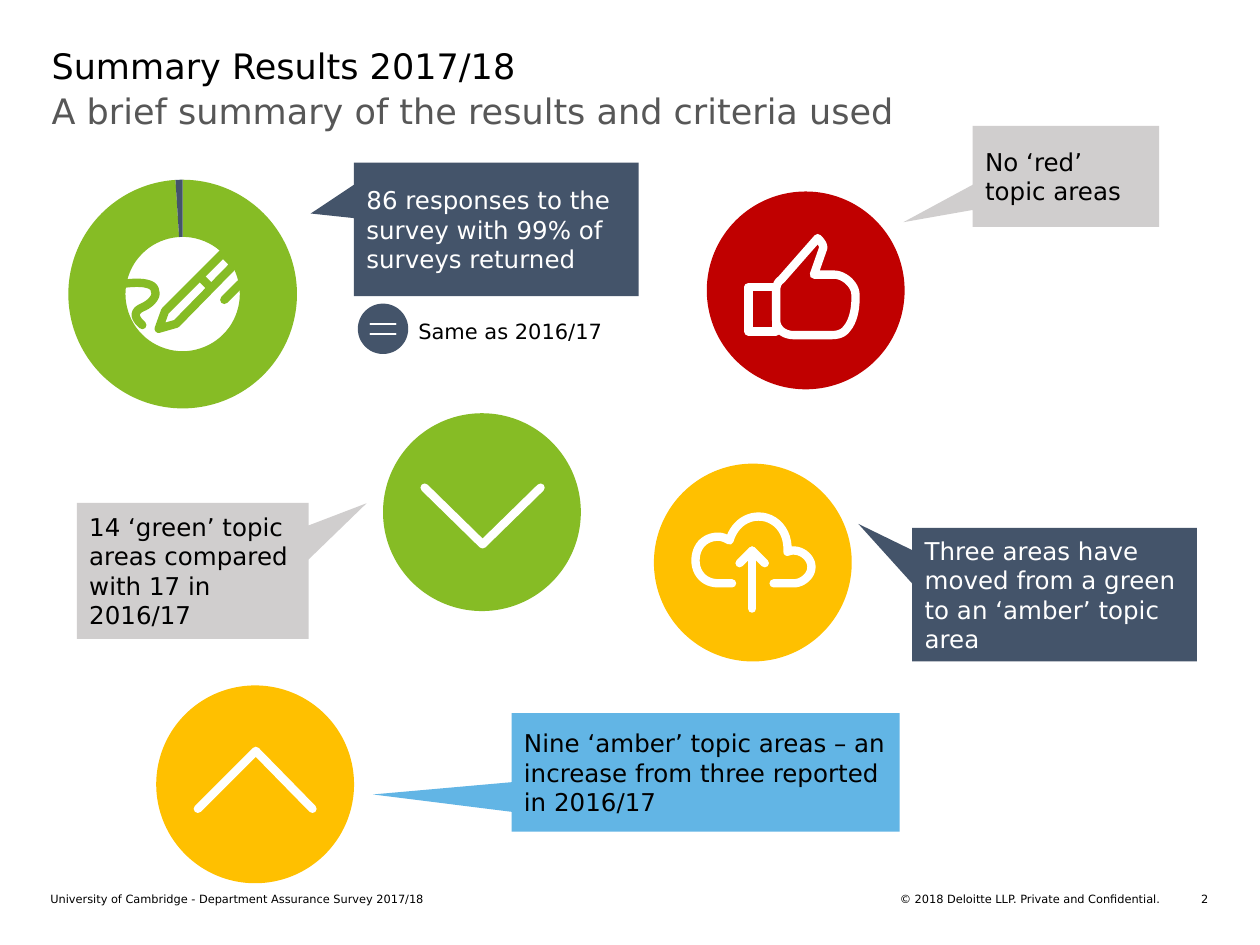
from dataclasses import dataclass

from lxml import etree
from pptx import Presentation
from pptx.chart.data import CategoryChartData
from pptx.dml.color import RGBColor
from pptx.enum.chart import XL_CHART_TYPE as Chart
from pptx.enum.shapes import MSO_CONNECTOR as Connector, MSO_SHAPE as Shape
from pptx.enum.text import MSO_ANCHOR as Anchor, PP_ALIGN as Align
from pptx.oxml import parse_xml
from pptx.oxml.ns import nsdecls, qn
from pptx.util import Inches, Pt


@dataclass(frozen=True)
class Theme:
    font: str = "DejaVu Sans"
    black: str = "000000"
    white: str = "FFFFFF"
    gray: str = "575757"
    pale: str = "D0CECE"
    navy: str = "44546A"
    blue: str = "62B5E5"
    green: str = "86BC25"
    red: str = "C00000"
    amber: str = "FFC000"
    heading: float = 20
    callout: float = 14
    note: float = 12
    chart: float = 10
    footer: float = 6.5
    thick: float = 4.75
    thin: float = 1.25


THEME = Theme()

# Text, left, top, width, height, size, colour, alignment
TEXTS = [
    ("Summary Results 2017/18", 0.41, 0.35, 9.16, 0.36, THEME.heading, THEME.black, Align.LEFT),
    ("A brief summary of the results and criteria used", 0.41, 0.71, 9.16, 0.36,
     THEME.heading, THEME.gray, Align.LEFT),
    ("Same as 2016/17", 3.32, 2.53, 2.19, 0.2, THEME.note, THEME.black, Align.LEFT),
    ("University of Cambridge - Department Assurance Survey 2017/18", 0.4, 7.08, 4.11, 0.27,
     THEME.footer, THEME.black, Align.LEFT),
    ("© 2018 Deloitte LLP. Private and Confidential.", 5.1, 7.08, 4.11, 0.27,
     THEME.footer, THEME.black, Align.RIGHT),
    ("2", 9.34, 7.08, 0.25, 0.11, THEME.footer, THEME.black, Align.RIGHT),
]

# Text, left, top, width, height, pointer, fill, text colour
CALLOUTS = [
    ("86 responses to the survey with 99% of surveys returned",
     2.81, 1.29, 2.26, 1.06, (-0.652, -0.118), THEME.navy, THEME.white),
    ("14 ‘green’ topic areas compared with 17 in 2016/17",
     0.61, 3.99, 1.84, 1.08, (0.75, -0.496), THEME.pale, THEME.black),
    ("Nine ‘amber’ topic areas – an increase from three reported in 2016/17",
     4.06, 5.66, 3.08, 0.94, (-0.857, 0.187), THEME.blue, THEME.black),
    ("No ‘red’ topic areas",
     7.72, 1, 1.48, 0.8, (-0.872, 0.455), THEME.pale, THEME.black),
    ("Three areas have moved from a green to an ‘amber’ topic area",
     7.24, 4.19, 2.26, 1.06, (-0.689, -0.53), THEME.navy, THEME.white),
]

# Left, top, diameter, fill
DISCS = [
    (2.84, 2.41, 0.4, THEME.navy),
    (3.04, 3.28, 1.57, THEME.green),
    (1.24, 5.44, 1.57, THEME.amber),
    (5.61, 1.52, 1.57, THEME.red),
    (5.19, 3.68, 1.57, THEME.amber),
]

# A step of two numbers is a point; a step of six is a Bezier curve.
PENCIL = [
    [(1, 2.25), (1.18, 2.23, 1.23, 2.27, 1.23, 2.31), (1.25, 2.35, 1.2, 2.41, 1.13, 2.44),
     (1.06, 2.47, 1.06, 2.52, 1.13, 2.58)],
    [(1.26, 2.61), (1.31, 2.47), (1.77, 2.01), (1.86, 2.1), (1.4, 2.57), (1.26, 2.61)],
    [(1.6, 2.21), (1.65, 2.26)],
    [(1.78, 2.38), (1.91, 2.25)],
]
EQUALS = [[(2.94, y), (3.14, y)] for y in (2.57, 2.65)]
CHEVRONS = [
    [(3.37, 3.87), (3.83, 4.32), (4.29, 3.87)],
    [(1.57, 6.42), (2.03, 5.96), (2.48, 6.42)],
]
THUMB = [
    [(5.94, 2.28), (6.16, 2.28), (6.16, 2.63), (5.94, 2.63), (5.94, 2.28)],
    [(6.16, 2.31), (6.16, 2.27, 6.17, 2.24, 6.2, 2.22), (6.49, 1.89),
     (6.53, 1.93, 6.54, 1.96, 6.53, 1.98), (6.46, 2.18), (6.62, 2.18),
     (6.7, 2.18, 6.79, 2.26, 6.79, 2.34), (6.79, 2.35, 6.8, 2.52, 6.72, 2.61),
     (6.69, 2.65, 6.65, 2.66, 6.59, 2.66), (6.3, 2.66),
     (6.22, 2.66, 6.16, 2.61, 6.16, 2.54), (6.16, 2.31)],
]
CLOUD = [
    [(5.81, 4.63), (5.7, 4.63), (5.59, 4.63, 5.52, 4.55, 5.52, 4.45),
     (5.52, 4.34, 5.59, 4.26, 5.7, 4.26), (5.74, 4.26, 5.77, 4.28, 5.79, 4.29),
     (5.82, 4.18, 5.91, 4.1, 6.02, 4.1), (6.15, 4.1, 6.26, 4.21, 6.25, 4.38),
     (6.27, 4.37, 6.29, 4.37, 6.3, 4.37), (6.37, 4.37, 6.44, 4.43, 6.44, 4.5),
     (6.44, 4.57, 6.37, 4.63, 6.3, 4.63), (6.14, 4.63)],
    [(5.97, 4.83), (5.97, 4.37)],
    [(5.87, 4.47), (5.97, 4.37), (6.07, 4.47)],
]
ICONS = [
    (PENCIL, THEME.green, THEME.thick),
    (EQUALS, THEME.white, THEME.thin),
    (CHEVRONS + THUMB + CLOUD, THEME.white, THEME.thick),
]
CURVE_STEPS = 12


def rgb(value):
    return RGBColor.from_string(value)


def paint(shape, color):
    shape.shadow.inherit = False
    shape.fill.solid()
    shape.fill.fore_color.rgb = rgb(color)
    shape.line.fill.background()


def write(frame, text, size, color, align=Align.LEFT, margin=0, anchor=Anchor.TOP):
    frame.word_wrap = True
    frame.vertical_anchor = anchor
    frame.margin_left = frame.margin_right = Inches(margin)
    frame.margin_top = frame.margin_bottom = Inches(margin)
    para = frame.paragraphs[0]
    para.alignment = align
    span = para.add_run()
    span.text = text
    span.font.name, span.font.size = THEME.font, Pt(size)
    span.font.color.rgb = rgb(color)


def flatten(steps):
    """Turn points and Bezier curves into a plain list of points."""
    points = [steps[0]]
    for step in steps[1:]:
        if len(step) == 2:
            points.append(step)
            continue
        corners = [points[-1], step[:2], step[2:4], step[4:]]
        for index in range(1, CURVE_STEPS + 1):
            t = index / CURVE_STEPS
            weights = ((1 - t) ** 3, 3 * t * (1 - t) ** 2, 3 * t * t * (1 - t), t ** 3)
            points.append(tuple(sum(w * c[axis] for w, c in zip(weights, corners))
                                for axis in (0, 1)))
    return points


def add_stroke(page, steps, color, width):
    points = [(Inches(x), Inches(y)) for x, y in flatten(steps)]
    if len(points) == 2:
        stroke = page.shapes.add_connector(Connector.STRAIGHT, *points[0], *points[1])
        etree.SubElement(stroke._element.spPr, qn("a:effectLst"))
    else:
        builder = page.shapes.build_freeform(*points[0], scale=1.0)
        builder.add_line_segments(points[1:], close=points[0] == points[-1])
        stroke = builder.convert_to_shape()
        stroke.shadow.inherit = False
        stroke.fill.background()
    stroke.line.color.rgb = rgb(color)
    stroke.line.width = Pt(width)
    line = stroke.line._get_or_add_ln()
    line.set("cap", "rnd")
    etree.SubElement(line, qn("a:round"))


def add_doughnut(page):
    data = CategoryChartData()
    data.categories = ["1", "2"]
    data.add_series("Series 1", (99, 1))
    chart = page.shapes.add_chart(Chart.DOUGHNUT, Inches(0.44), Inches(1.11),
                                  Inches(2.04), Inches(3.14), data).chart
    chart.has_legend = chart.has_title = False
    chart.font.name, chart.font.size = THEME.font, Pt(THEME.chart)
    chart.font.color.rgb = rgb(THEME.black)
    plot = chart.plots[0]
    plot.has_data_labels = False
    for index, color in enumerate((THEME.green, THEME.navy)):
        form = plot.series[0].points[index].format
        form.fill.solid()
        form.fill.fore_color.rgb = rgb(color)
        form.line.fill.background()
    area = chart._chartSpace.chart.plotArea
    area.find(".//" + qn("c:holeSize")).set("val", "75")
    for layout in area.findall(qn("c:layout")):
        area.remove(layout)
    settings = [("layoutTarget", "inner"), ("xMode", "edge"), ("yMode", "edge"),
                ("x", 0.05), ("y", 0.1), ("w", 0.89), ("h", 0.58)]
    parts = "".join(f'<c:{tag} val="{value}"/>' for tag, value in settings)
    area.insert(0, parse_xml(f'<c:layout {nsdecls("c")}><c:manualLayout>{parts}'
                             "</c:manualLayout></c:layout>"))


def main():
    deck = Presentation()
    deck.slide_width, deck.slide_height = Inches(10), Inches(7.5)
    page = deck.slides.add_slide(deck.slide_layouts[6])
    add_doughnut(page)
    for left, top, size, color in DISCS:
        paint(page.shapes.add_shape(Shape.OVAL, *map(Inches, (left, top, size, size))), color)
    for strokes, color, width in ICONS:
        for steps in strokes:
            add_stroke(page, steps, color, width)
    for text, *place, pointer, fill, color in CALLOUTS:
        box = page.shapes.add_shape(Shape.RECTANGULAR_CALLOUT, *map(Inches, place))
        paint(box, fill)
        box.adjustments[0], box.adjustments[1] = pointer
        write(box.text_frame, text, THEME.callout, color, margin=0.1, anchor=Anchor.MIDDLE)
    for text, *place, size, color, align in TEXTS:
        box = page.shapes.add_textbox(*map(Inches, place))
        write(box.text_frame, text, size, color, align)
    deck.save("out.pptx")


if __name__ == "__main__":
    main()
